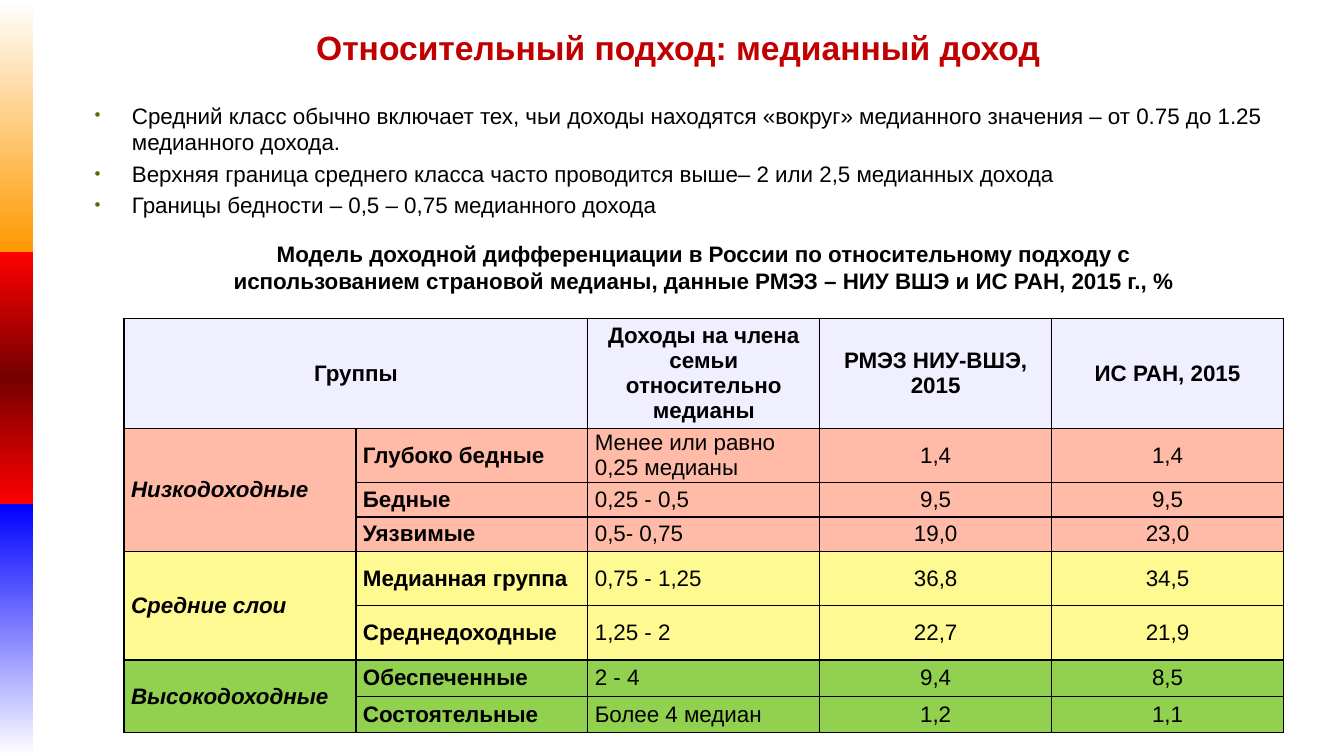
"""Build a slide about the relative, median-income approach to social groups."""
from dataclasses import dataclass

import pptx
import pptx.dml.color
import pptx.enum.shapes
import pptx.enum.text
import pptx.oxml
import pptx.oxml.ns
import pptx.util
from pptx.util import Inches

ALIGN = pptx.enum.text.PP_ALIGN
ANCHOR = pptx.enum.text.MSO_ANCHOR
NAMESPACE = pptx.oxml.ns.nsdecls("a")
BLACK = "000000"


@dataclass
class Band:
    stops: list[tuple[int, str]]


@dataclass
class Group:
    name: str
    color: str
    rows: list[tuple[str, str, str, str]]


BANDS = [
    Band([(0, "FFFFFF"), (100, "FF9900")]),
    Band([(0, "FF0000"), (50, "760000"), (100, "FF0000")]),
    Band([(0, "0000FF"), (100, "FFFFFF")]),
]
BULLETS = [
    "Средний класс обычно включает тех, чьи доходы находятся «вокруг» медианного значения – от 0.75 до 1.25 медианного дохода.",
    "Верхняя граница среднего класса часто проводится выше– 2 или 2,5 медианных дохода",
    "Границы бедности – 0,5 – 0,75 медианного дохода",
]
HEADERS = ["Группы", "", "Доходы на члена семьи относительно медианы", "РМЭЗ НИУ-ВШЭ, 2015", "ИС РАН, 2015"]
GROUPS = [
    Group("Низкодоходные", "FFBBA8", [
        ("Глубоко бедные", "Менее или равно 0,25 медианы", "1,4", "1,4"),
        ("Бедные", "0,25 - 0,5", "9,5", "9,5"),
        ("Уязвимые", "0,5- 0,75", "19,0", "23,0"),
    ]),
    Group("Средние слои", "FFF992", [
        ("Медианная группа", "0,75 - 1,25", "36,8", "34,5"),
        ("Среднедоходные", "1,25 - 2", "22,7", "21,9"),
    ]),
    Group("Высокодоходные", "92D050", [
        ("Обеспеченные", "2 - 4", "9,4", "8,5"),
        ("Состоятельные", "Более 4 медиан", "1,2", "1,1"),
    ]),
]
ROW_HEIGHTS = [1.09, 0.54, 0.34, 0.34, 0.54, 0.54, 0.36, 0.36]
COLUMN_WIDTH = 2.3


def rgb(color: str) -> pptx.dml.color.RGBColor:
    return pptx.dml.color.RGBColor.from_string(color)


def xml(tag: str, attributes: str, content: str = ""):
    return pptx.oxml.parse_xml(f"<a:{tag} {NAMESPACE} {attributes}>{content}</a:{tag}>")


def format_text(frame, size: float = 16, color: str = BLACK, bold: bool = False,
                italic: bool = False, align=ALIGN.LEFT) -> None:
    for paragraph in frame.paragraphs:
        paragraph.alignment = align
        for span in paragraph.runs:
            font = span.font
            font.name, font.size = "Arial", pptx.util.Pt(size)
            font.bold, font.italic = bold, italic
            font.color.rgb = rgb(color)


def add_text(page, left: float, top: float, width: float, height: float, text: str):
    box = page.shapes.add_textbox(Inches(left), Inches(top), Inches(width), Inches(height))
    frame = box.text_frame
    frame.word_wrap = True
    frame.text = text
    return frame


def add_band(page, index: int, band: Band) -> None:
    shape = page.shapes.add_shape(pptx.enum.shapes.MSO_SHAPE.RECTANGLE, 0,
                                  Inches(2.5 * index), Inches(0.33), Inches(2.5))
    shape.shadow.inherit = False
    shape.line.fill.background()
    shape.fill.gradient()
    shape.fill.gradient_angle = 270
    stop_list = shape._element.spPr.find(".//" + pptx.oxml.ns.qn("a:gsLst"))
    for stop in list(stop_list):
        stop_list.remove(stop)
    for position, color in band.stops:
        stop_list.append(xml("gs", f'pos="{position * 1000}"', f'<a:srgbClr val="{color}"/>'))


def add_bullets(page) -> None:
    frame = add_text(page, 0.84, 0.96, 12.05, 1.14, "\n".join(BULLETS))
    format_text(frame)
    indent = Inches(0.37)
    for paragraph in frame.paragraphs:
        paragraph.space_before = pptx.util.Pt(3.2)
        properties = paragraph._p.get_or_add_pPr()
        properties.set("marL", str(indent))
        properties.set("indent", str(-indent))
        properties.append(xml("buClr", "", '<a:srgbClr val="666600"/>'))
        properties.append(xml("buSzPct", 'val="75000"'))
        properties.append(xml("buFont", 'typeface="Arial"'))
        properties.append(xml("buChar", 'char="•"'))


def fill_cell(cell, text: str, color: str, bold: bool, italic: bool, align) -> None:
    cell.text = text
    format_text(cell.text_frame, bold=bold, italic=italic, align=align)
    cell.vertical_anchor = ANCHOR.MIDDLE
    cell.margin_left = cell.margin_right = Inches(0.07)
    cell.margin_top = cell.margin_bottom = 0
    cell.fill.solid()
    cell.fill.fore_color.rgb = rgb(color)
    properties = cell._tc.get_or_add_tcPr()
    for position, side in enumerate("LRTB"):
        line = f'<a:solidFill><a:srgbClr val="{BLACK}"/></a:solidFill>'
        properties.insert(position, xml(f"ln{side}", 'w="12700"', line))


def add_income_table(page) -> None:
    columns = len(HEADERS)
    frame = page.shapes.add_table(len(ROW_HEIGHTS), columns, Inches(1.23), Inches(3.16),
                                  Inches(COLUMN_WIDTH * columns), Inches(sum(ROW_HEIGHTS)))
    table = frame.table
    for column in table.columns:
        column.width = Inches(COLUMN_WIDTH)
    for row, height in zip(table.rows, ROW_HEIGHTS):
        row.height = Inches(height)
    for column, text in enumerate(HEADERS):
        fill_cell(table.cell(0, column), text, "EFEFFF", True, False, ALIGN.CENTER)
    table.cell(0, 0).merge(table.cell(0, 1))
    first = 1
    for group in GROUPS:
        for offset, values in enumerate(group.rows):
            name = "" if offset else group.name
            for column, text in enumerate((name, *values)):
                align = ALIGN.CENTER if column > 2 else ALIGN.LEFT
                fill_cell(table.cell(first + offset, column), text, group.color,
                          column < 2, column == 0, align)
        last = first + len(group.rows) - 1
        table.cell(first, 0).merge(table.cell(last, 0))
        first = last + 1


def main() -> None:
    deck = pptx.Presentation()
    deck.slide_width, deck.slide_height = Inches(13.33), Inches(7.5)
    page = deck.slides.add_slide(deck.slide_layouts[6])
    for index, band in enumerate(BANDS):
        add_band(page, index, band)
    title = add_text(page, 2.35, 0.31, 8.75, 0.41, "Относительный подход: медианный доход")
    title.vertical_anchor = ANCHOR.BOTTOM
    format_text(title, size=24, color="C00000", bold=True, align=ALIGN.CENTER)
    caption = add_text(page, 1.86, 2.33, 10.24, 0.64,
                       "Модель доходной дифференциации в России по относительному подходу с "
                       "использованием страновой медианы, данные РМЭЗ – НИУ ВШЭ и ИС РАН, 2015 г., %")
    format_text(caption, bold=True, align=ALIGN.CENTER)
    add_bullets(page)
    add_income_table(page)
    deck.save("out.pptx")


if __name__ == "__main__":
    main()
